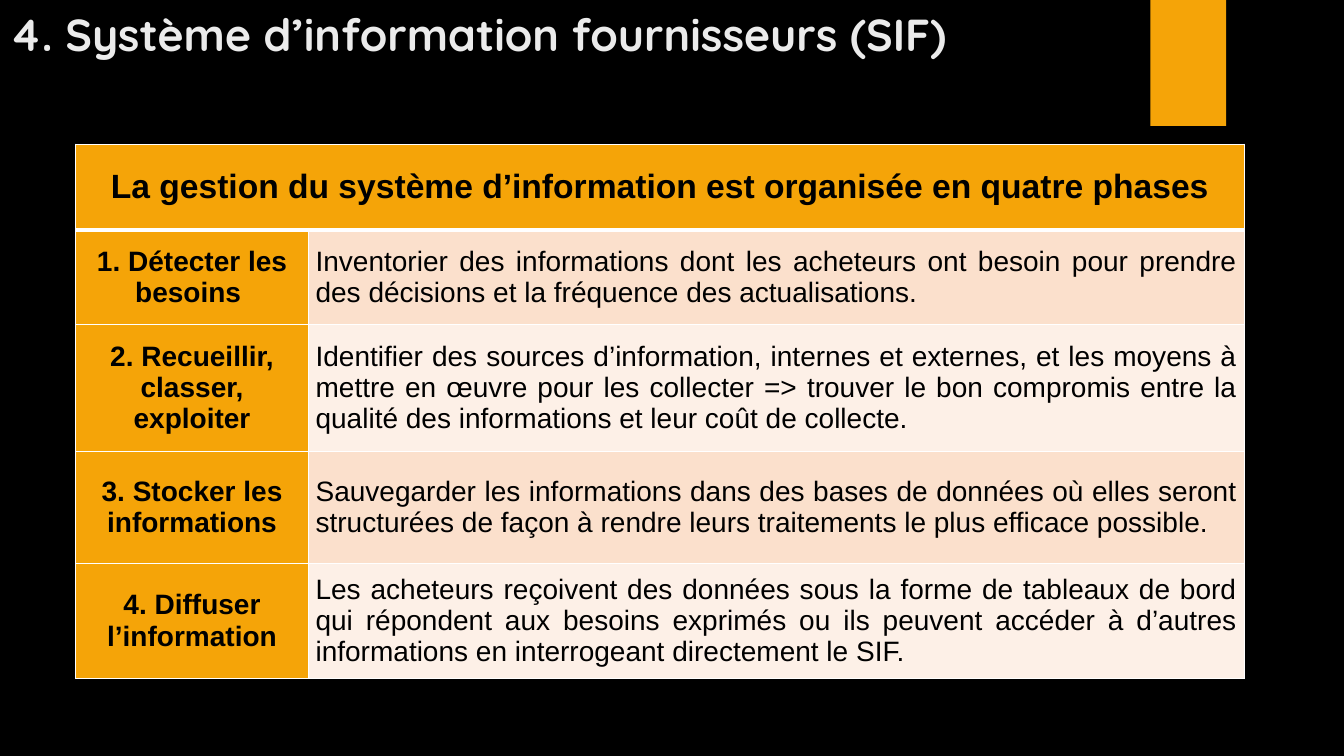
from dataclasses import dataclass

from lxml.etree import SubElement
from pptx import Presentation
from pptx.dml.color import RGBColor
from pptx.enum.shapes import MSO_SHAPE
from pptx.enum.text import MSO_ANCHOR, PP_ALIGN
from pptx.oxml.ns import qn
from pptx.util import Inches, Pt

WIDTH, HEIGHT = Inches(13.33), Inches(7.5)


@dataclass(frozen=True)
class Theme:
    back: str = "000000"
    accent: str = "F5A408"
    ink: str = "000000"
    title: str = "EBEBEB"
    border: str = "FFFFFF"
    bands: tuple = ("FBE0CC", "FDF0E7")
    head_font: str = "Quicksand"
    body_font: str = "Arial"
    title_size: int = 32
    header_size: int = 24
    body_size: int = 20
    thin: int = 1
    thick: int = 3


THEME = Theme()
TITLE = "4. Système d’information fournisseurs (SIF)"
HEADER = "La gestion du système d’information est organisée en quatre\u00a0phases"
PHASES = [
    ("1. Détecter les besoins ",
     "Inventorier des informations dont les acheteurs ont besoin pour prendre "
     "des décisions et la fréquence des actualisations."),
    ("2. Recueillir, classer, exploiter",
     "Identifier des sources d’information, internes et externes, et les moyens "
     "à mettre en œuvre pour les collecter => trouver le bon compromis entre la "
     "qualité des informations et leur coût de collecte."),
    ("3. Stocker les informations",
     "Sauvegarder les informations dans des bases de données où elles seront "
     "structurées de façon à rendre leurs traitements le plus efficace possible."),
    ("4. Diffuser l’information",
     "Les acheteurs reçoivent des données sous la forme de tableaux de bord qui "
     "répondent aux besoins exprimés ou ils peuvent accéder à d’autres "
     "informations en interrogeant directement le SIF."),
]
# Shares of the slide, in percent
COLS = (17.33, 69.62)
ROWS = (11.33, 12.53, 16.8, 14.8, 15.2)


def across(share):
    return int(WIDTH * share / 100)


def down(share):
    return int(HEIGHT * share / 100)


def place(left, top, width, height):
    return across(left), down(top), across(width), down(height)


def paint(fill, color):
    fill.solid()
    fill.fore_color.rgb = RGBColor.from_string(color)


def style(line, font, size, color, bold):
    for run in line.runs:
        run.font.name = font
        run.font.size = Pt(size)
        run.font.bold = bold
        run.font.color.rgb = RGBColor.from_string(color)


def add_title(slide):
    box = slide.shapes.add_textbox(*place(0, 0, 72.39, 8.67))
    frame = box.text_frame
    frame.word_wrap = True
    frame.vertical_anchor = MSO_ANCHOR.BOTTOM
    frame.text = TITLE
    style(frame.paragraphs[0], THEME.head_font, THEME.title_size, THEME.title, True)


def add_tab(slide):
    tab = slide.shapes.add_shape(MSO_SHAPE.RECTANGLE, *place(85.6, 0, 5.63, 16.67))
    tab.shadow.inherit = False
    paint(tab.fill, THEME.accent)
    tab.line.fill.background()


def add_edges(cell, top, bottom):
    """Draw the four cell borders; call before the cell's fill is set."""
    props = cell._tc.get_or_add_tcPr()
    widths = {"L": THEME.thin, "R": THEME.thin, "T": top, "B": bottom}
    for side, width in widths.items():
        edge = SubElement(props, qn(f"a:ln{side}"), w=str(Pt(width)))
        solid = SubElement(edge, qn("a:solidFill"))
        SubElement(solid, qn("a:srgbClr"), val=THEME.border)


def fill_cell(cell, text, color, size, bold, align):
    cell.margin_left = cell.margin_right = Inches(0.07)
    cell.margin_top = cell.margin_bottom = 0
    cell.vertical_anchor = MSO_ANCHOR.MIDDLE
    paint(cell.fill, color)
    cell.text_frame.text = text
    line = cell.text_frame.paragraphs[0]
    line.alignment = align
    style(line, THEME.body_font, size, THEME.ink, bold)


def add_phases(slide):
    area = place(5.63, 19.07, sum(COLS), sum(ROWS))
    table = slide.shapes.add_table(len(ROWS), len(COLS), *area).table
    table.horz_banding = False
    for col, share in zip(table.columns, COLS):
        col.width = across(share)
    for index, share in enumerate(ROWS):
        table.rows[index].height = down(share)
        for cell in table.rows[index].cells:
            add_edges(cell, THEME.thick if index == 1 else THEME.thin,
                      THEME.thick if index == 0 else THEME.thin)

    head = table.cell(0, 0)
    head.merge(table.cell(0, 1))
    fill_cell(head, HEADER, THEME.accent, THEME.header_size, True, PP_ALIGN.CENTER)
    for row, (name, detail) in enumerate(PHASES, 1):
        band = THEME.bands[(row - 1) % 2]
        fill_cell(table.cell(row, 0), name, THEME.accent, THEME.body_size,
                  True, PP_ALIGN.CENTER)
        fill_cell(table.cell(row, 1), detail, band, THEME.body_size,
                  False, PP_ALIGN.JUSTIFY)


def main():
    deck = Presentation()
    deck.slide_width, deck.slide_height = WIDTH, HEIGHT
    slide = deck.slides.add_slide(deck.slide_layouts[6])
    paint(slide.background.fill, THEME.back)
    add_tab(slide)
    add_phases(slide)
    add_title(slide)
    deck.save("out.pptx")


if __name__ == "__main__":
    main()
